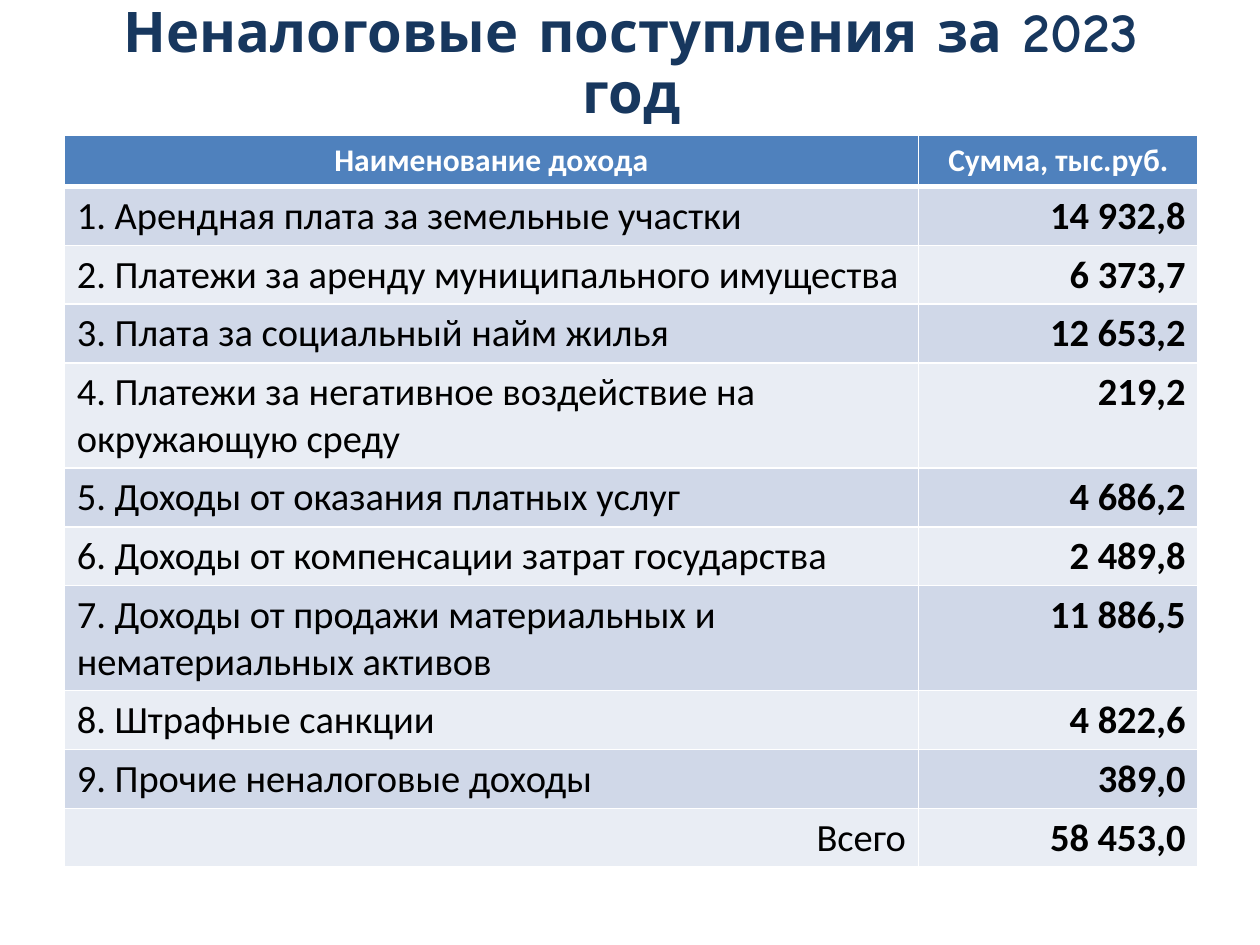
from lxml import etree
from pptx import Presentation
from pptx import util as u
from pptx.dml.color import RGBColor
from pptx.enum import text
from pptx.oxml import ns

# Content
TITLE = "Неналоговые поступления за 2023 год"
HEADER = ("Наименование дохода", "Сумма, тыс.руб.")
INCOME = [
    ("Арендная плата за земельные участки", "14 932,8"),
    ("Платежи за аренду муниципального имущества", "6 373,7"),
    ("Плата за социальный найм жилья", "12 653,2"),
    ("Платежи за негативное воздействие на окружающую среду", "219,2"),
    ("Доходы от оказания платных услуг", "4 686,2"),
    ("Доходы от компенсации затрат государства", "2 489,8"),
    ("Доходы от продажи материальных и нематериальных активов", "11 886,5"),
    ("Штрафные санкции", "4 822,6"),
    ("Прочие неналоговые доходы", "389,0"),
]
TOTAL = ("Всего", "58 453,0")


class Theme:
    title_font, body_font = "Comic Neue", "Calibri"
    title_size, header_size, body_size = 32, 18, 22
    title, header_text, body_text = "17375E", "FFFFFF", "000000"
    header, bands, rule = "4F81BD", ("D0D8E8", "E9EDF4"), "FFFFFF"
    thin, thick = 1, 3


# Layout
LEFT, WIDTH = 0.51, 9
TITLE_TOP, TITLE_HEIGHT = -0.11, 1.25
TABLE_TOP, ROW_HEIGHT = 1.07, 0.41
COLUMNS = (6.78, 2.22)
ALIGN = text.PP_ALIGN


def style(p, font, size, color, bold, align):
    p.alignment = align
    for r in p.runs:
        r.font.name, r.font.size, r.font.bold = font, u.Pt(size), bold
        r.font.color.rgb = RGBColor.from_string(color)


def add_borders(cell, top, bottom):
    sides = {"L": Theme.thin, "R": Theme.thin, "T": top, "B": bottom}
    for side, width in sides.items():
        ln = etree.SubElement(cell._tc.get_or_add_tcPr(), ns.qn(f"a:ln{side}"),
                              w=str(u.Pt(width)))
        fill = etree.SubElement(ln, ns.qn("a:solidFill"))
        etree.SubElement(fill, ns.qn("a:srgbClr"), val=Theme.rule)


def add_title(s):
    box = s.shapes.add_textbox(*map(u.Inches, (LEFT, TITLE_TOP, WIDTH, TITLE_HEIGHT)))
    tf = box.text_frame
    tf.word_wrap = True
    tf.vertical_anchor = text.MSO_ANCHOR.MIDDLE
    tf.text = TITLE
    p = tf.paragraphs[0]
    p.line_spacing = 0.9
    style(p, Theme.title_font, Theme.title_size, Theme.title, True, ALIGN.CENTER)


def add_income_table(s):
    numbered = [(f"{n}. {name}", amount) for n, (name, amount) in enumerate(INCOME, 1)]
    rows = [HEADER, *numbered, TOTAL]
    table = s.shapes.add_table(
        len(rows), len(COLUMNS), u.Inches(LEFT), u.Inches(TABLE_TOP),
        u.Inches(WIDTH), u.Inches(ROW_HEIGHT * len(rows))).table
    for column, width in zip(table.columns, COLUMNS):
        column.width = u.Inches(width)

    for i, row in enumerate(rows):
        table.rows[i].height = u.Inches(ROW_HEIGHT)
        for j, value in enumerate(row):
            cell = table.cell(i, j)
            cell.text = value
            p = cell.text_frame.paragraphs[0]
            if i == 0:
                fill = Theme.header
                style(p, Theme.body_font, Theme.header_size, Theme.header_text,
                      True, ALIGN.CENTER)
            else:
                fill = Theme.bands[(i - 1) % 2]
                right = j == 1 or row is TOTAL
                style(p, Theme.body_font, Theme.body_size, Theme.body_text,
                      j == 1, ALIGN.RIGHT if right else ALIGN.LEFT)
            # The heavy rule separates the header from the first income row
            add_borders(cell, Theme.thick if i == 1 else Theme.thin,
                        Theme.thick if i == 0 else Theme.thin)
            cell.fill.solid()
            cell.fill.fore_color.rgb = RGBColor.from_string(fill)


def main():
    prs = Presentation()
    prs.slide_width, prs.slide_height = u.Inches(10), u.Inches(7.5)
    s = prs.slides.add_slide(prs.slide_layouts[6])
    add_title(s)
    add_income_table(s)
    prs.save("out.pptx")


if __name__ == "__main__":
    main()
